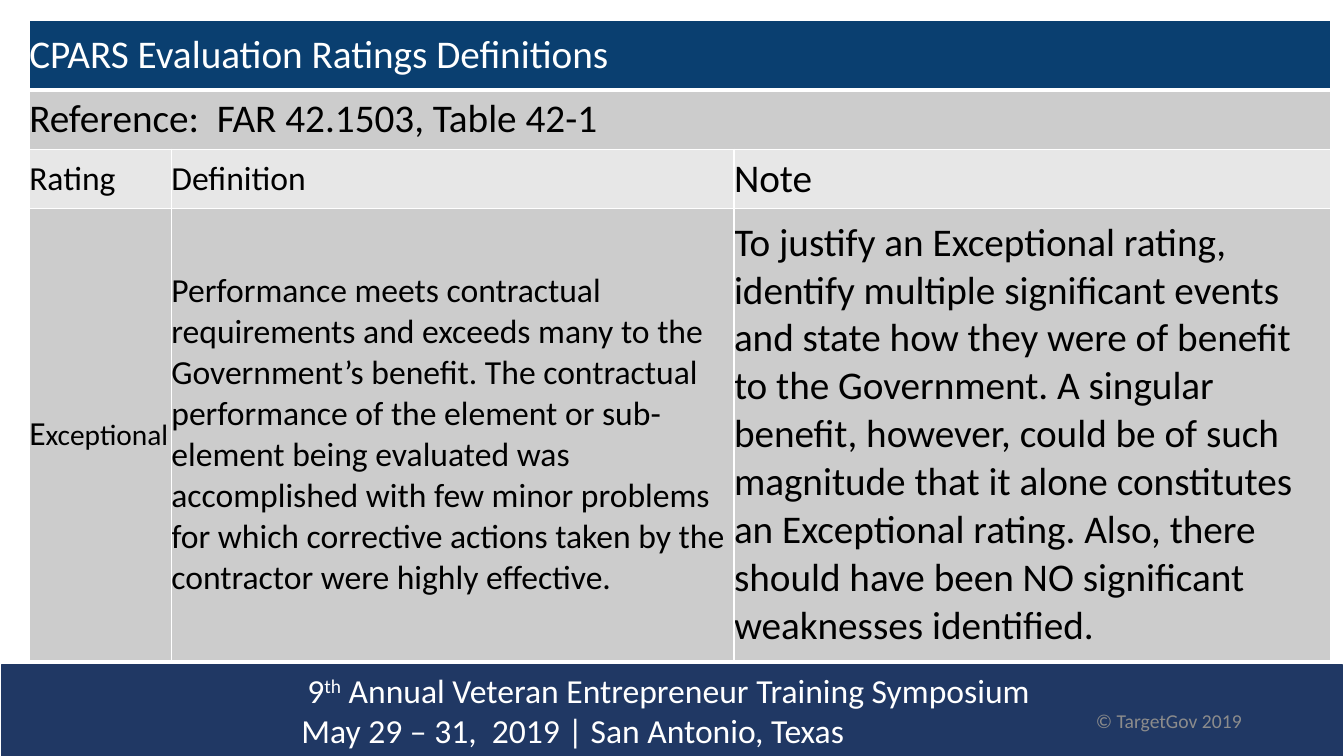
from pptx import Presentation
from pptx.dml.color import RGBColor
from pptx.enum.shapes import MSO_SHAPE as Shape
from pptx.enum.text import MSO_ANCHOR as Anchor, PP_ALIGN as Align
from pptx.oxml import parse_xml
from pptx.oxml.ns import nsdecls
from pptx.util import Inches, Pt

NAVY = RGBColor(0x20, 0x38, 0x64)
HEADER_BLUE = RGBColor(0x0A, 0x3F, 0x70)
WHITE = RGBColor(0xFF, 0xFF, 0xFF)
BLACK = RGBColor(0x00, 0x00, 0x00)
GRAY = RGBColor(0x8C, 0x8C, 0x8C)
DARK_BAND = RGBColor(0xCC, 0xCC, 0xCC)
LIGHT_BAND = RGBColor(0xE7, 0xE7, 0xE7)

COLUMN_WIDTHS = [1.41, 5.58, 5.92]
ROW_HEIGHTS = [0.69, 0.59, 0.59, 4.48]
ROW_STYLES = [(HEADER_BLUE, WHITE), (DARK_BAND, BLACK), (LIGHT_BAND, BLACK), (DARK_BAND, BLACK)]

# Each cell is a list of (text, size) spans; a row with one cell is merged.
RATING_ROWS = [
    [[("CPARS Evaluation Ratings Definitions", 28)]],
    [[("Reference:  FAR 42.1503, Table 42-1", 28)]],
    [[("Rating", 24)], [("Definition", 24)], [("Note", 28)]],
    [
        [("E", 24), ("xceptional", 21)],
        [("Performance meets contractual requirements and exceeds many to the "
          "Government’s benefit. The contractual performance of the element or "
          "sub-element being evaluated was accomplished with few minor problems "
          "for which corrective actions taken by the contractor were highly "
          "effective.", 24)],
        [("To justify an Exceptional rating, identify multiple significant events "
          "and state how they were of benefit to the Government. A singular "
          "benefit, however, could be of such magnitude that it alone constitutes "
          "an Exceptional rating. Also, there should have been NO significant "
          "weaknesses identified.", 28)],
    ],
]


def add_span(para, text, *, size, color, font="Calibri", baseline=None):
    span = para.add_run()
    span.text = text
    span.font.name = font
    span.font.size = Pt(size)
    span.font.color.rgb = color
    if baseline:
        span.font._element.set("baseline", str(baseline * 1000))


def add_border(cell, side, width):
    cell._tc.get_or_add_tcPr().append(parse_xml(
        f'<a:ln{side} {nsdecls("a")} w="{Pt(width)}"><a:solidFill>'
        f'<a:srgbClr val="{WHITE}"/></a:solidFill></a:ln{side}>'))


class SlideBuilder:
    def __init__(self, page):
        self.page = page

    def banner(self, left, top, width, height, lines):
        """Draw a filled bar; each line is (indent, spans)."""
        box = self.page.shapes.add_shape(
            Shape.RECTANGLE, Inches(left), Inches(top), Inches(width), Inches(height))
        box.shadow.inherit = False
        box.fill.solid()
        box.fill.fore_color.rgb = NAVY
        box.line.color.rgb = NAVY
        box.line.width = Pt(1)
        frame = box.text_frame
        frame.word_wrap = True
        frame.vertical_anchor = Anchor.MIDDLE
        for index, (indent, spans) in enumerate(lines):
            para = frame.add_paragraph() if index else frame.paragraphs[0]
            para.alignment = Align.LEFT
            para._p.get_or_add_pPr().set("marL", str(Inches(indent)))
            for text, baseline in spans:
                add_span(para, text, size=24, color=WHITE, baseline=baseline)

    def label(self, left, top, width, height, text, **style):
        box = self.page.shapes.add_textbox(
            Inches(left), Inches(top), Inches(width), Inches(height))
        frame = box.text_frame
        frame.word_wrap = True
        frame.vertical_anchor = Anchor.MIDDLE
        add_span(frame.paragraphs[0], text, **style)

    def table(self, left, top, rows):
        table = self.page.shapes.add_table(
            len(rows), len(COLUMN_WIDTHS), Inches(left), Inches(top),
            Inches(sum(COLUMN_WIDTHS)), Inches(sum(ROW_HEIGHTS))).table
        for column, width in zip(table.columns, COLUMN_WIDTHS):
            column.width = Inches(width)
        for index, (contents, (fill, color)) in enumerate(zip(rows, ROW_STYLES)):
            table.rows[index].height = Inches(ROW_HEIGHTS[index])
            cells = list(table.rows[index].cells)
            for cell in cells:
                self.style_cell(cell, fill, bottom=1 if index else 3)
            if len(contents) == 1:
                cells[0].merge(cells[-1])
            for cell, spans in zip(cells, contents):
                for text, size in spans:
                    add_span(cell.text_frame.paragraphs[0], text, size=size, color=color)

    def style_cell(self, cell, fill, bottom):
        cell.margin_left = cell.margin_right = cell.margin_top = cell.margin_bottom = 0
        cell.vertical_anchor = Anchor.MIDDLE
        for side, width in (("L", 1), ("R", 1), ("T", 1), ("B", bottom)):
            add_border(cell, side, width)
        cell.fill.solid()
        cell.fill.fore_color.rgb = fill


def main():
    deck = Presentation()
    deck.slide_width, deck.slide_height = Inches(13.33), Inches(7.5)
    builder = SlideBuilder(deck.slides.add_slide(deck.slide_layouts[6]))
    builder.banner(0.02, 6.59, 13.29, 0.91, [
        (2.93, [("9", None), ("th", 30),
                (" Annual Veteran Entrepreneur Training Symposium", None)]),
        (2.87, [("May 29 – 31,  2019 | San Antonio, Texas", None)]),
    ])
    builder.label(10.77, 6.99, 2.22, 0.32, "© TargetGov 2019", size=14, color=GRAY)
    builder.table(0.29, 0.2, RATING_ROWS)
    deck.save("out.pptx")


if __name__ == "__main__":
    main()
